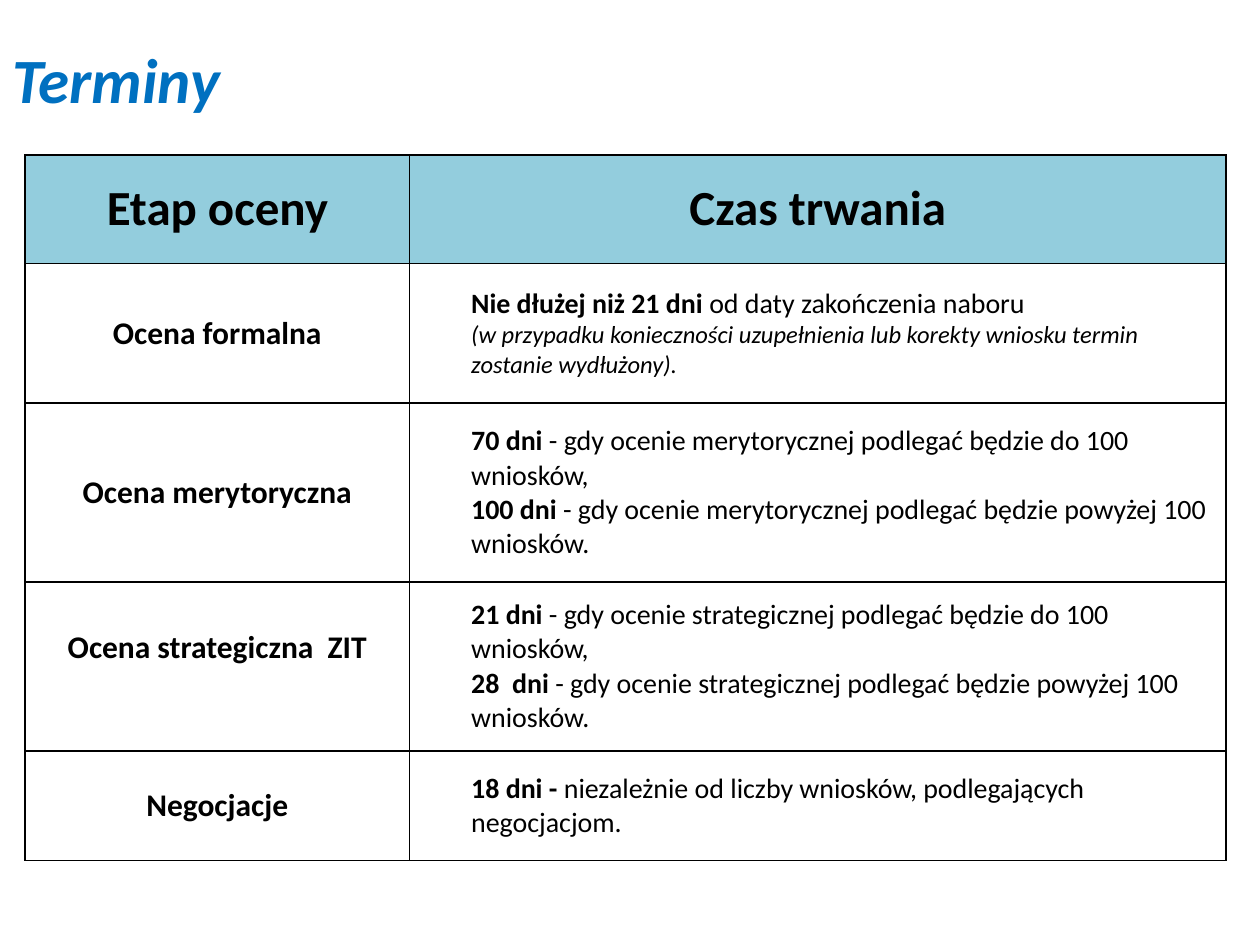
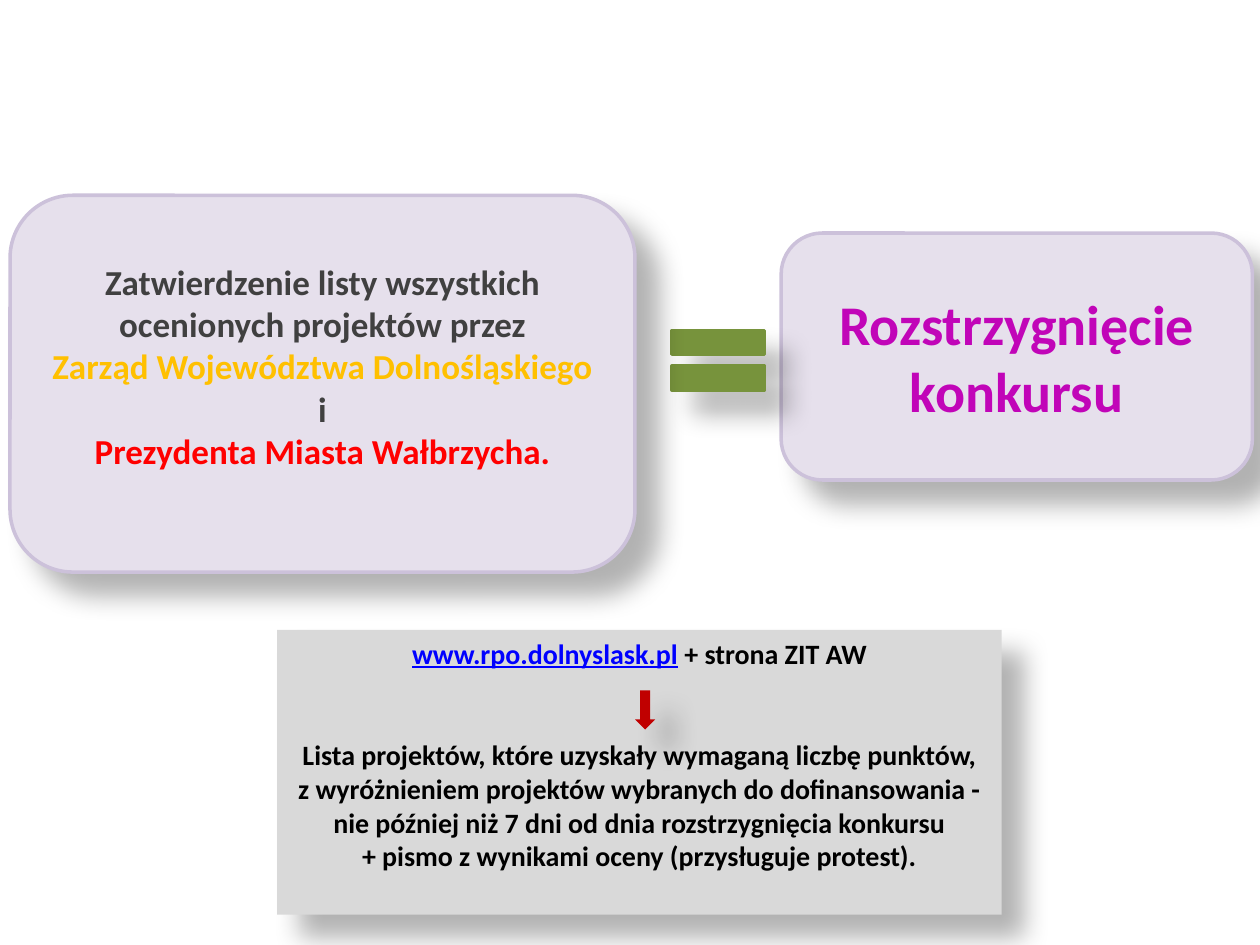
"""Builds two slides on assessment deadlines and the settlement of a contest."""
from lxml import etree
from pptx import Presentation
from pptx import util as u
from pptx.dml.color import RGBColor
from pptx.enum import shapes, text
from pptx.oxml.ns import qn

COLUMNS, ROWS = 100, 75
BLACK, WHITE, BLUE, HEADER = "000000", "FFFFFF", "0070C0", "93CDDD"
LILAC, LILAC_EDGE, GREEN, GREY, RED = "E6E0EC", "CCC1DA", "77933C", "D9D9D9", "C00000"
LEFT, CENTER = text.PP_ALIGN.LEFT, text.PP_ALIGN.CENTER
TOP, MIDDLE = text.MSO_ANCHOR.TOP, text.MSO_ANCHOR.MIDDLE


def color(value):
    return RGBColor.from_string(value)


class Painter:
    """Holds the style and the current slide."""

    def __init__(self, deck, font="Calibri"):
        self.deck, self.font, self.page = deck, font, None
        self.column = deck.slide_width / COLUMNS
        self.row = deck.slide_height / ROWS

    def new_page(self):
        self.page = self.deck.slides.add_slide(self.deck.slide_layouts[6])

    def across(self, columns):
        return u.Emu(round(columns * self.column))

    def down(self, rows):
        return u.Emu(round(rows * self.row))

    def place(self, left, top, width, height):
        return self.across(left), self.down(top), self.across(width), self.down(height)

    def fill_text(self, frame, paras, size, ink=BLACK, bold=None, align=CENTER):
        for index, (spans, style) in enumerate(paras):
            para = frame.paragraphs[0] if index == 0 else frame.add_paragraph()
            para.alignment = align
            if "before" in style:
                para.space_before = u.Pt(style["before"])
            font = para.font
            font.name, font.size = self.font, u.Pt(style.get("size", size))
            font.bold, font.italic = bold, style.get("italic")
            font.color.rgb = color(style.get("ink", ink))
            for words, look in spans:
                self.span(para, words, look)

    def span(self, para, words, look):
        for index, line in enumerate(words.split("\n")):
            if index:
                para.add_line_break()
            span = para.add_run()
            span.text = line
            if "bold" in look:
                span.font.bold = look["bold"]
            if "link_ink" in look:
                span.font.underline = True
                span.font.color.rgb = color(look["link_ink"])

    def title(self, words):
        box = self.page.shapes.add_textbox(*self.place(0, 0, 90, 12.5))
        frame = box.text_frame
        frame.word_wrap, frame.vertical_anchor = True, MIDDLE
        self.fill_text(frame, [plain(words, italic=True)], 36, BLUE, True, LEFT)

    def shape(self, kind, at, fill, edge=None):
        shape = self.page.shapes.add_shape(kind, *self.place(*at))
        shape.fill.solid()
        shape.fill.fore_color.rgb = color(fill)
        if edge:
            shape.line.color.rgb = color(edge)
            shape.line.width = u.Pt(2)
        else:
            shape.line.fill.background()
        self.cast_shadow(shape)
        return shape

    def cast_shadow(self, shape):
        shape.shadow.inherit = False
        effects = shape._element.spPr.find(qn("a:effectLst"))
        shadow = etree.SubElement(
            effects, qn("a:outerShdw"), blurRad=str(u.Pt(15)), dist=str(u.Pt(18)),
            dir=str(45 * 60000), algn="tl", rotWithShape="0")
        tint = etree.SubElement(shadow, qn("a:srgbClr"), val=BLACK)
        etree.SubElement(tint, qn("a:alpha"), val="30000")

    def panel(self, kind, at, paras, size, fill, edge=None, ink=BLACK, anchor=MIDDLE, lift=0):
        frame = self.shape(kind, at, fill, edge).text_frame
        frame.word_wrap, frame.vertical_anchor = True, anchor
        frame.margin_bottom = self.down(0.5 + lift)
        self.fill_text(frame, paras, size, ink, True)

    def table(self, left, top, widths, heights):
        frame = self.page.shapes.add_table(
            len(heights), len(widths), *self.place(left, top, sum(widths), sum(heights)))
        table = frame.table
        table.first_row = table.horz_banding = False
        for column, width in zip(table.columns, widths):
            column.width = self.across(width)
        for row, height in zip(table.rows, heights):
            row.height = self.down(height)
        return table

    def cell(self, cell, paras, size, fill=WHITE, bold=None, align=CENTER, indent=0, lift=0):
        cell.fill.solid()
        cell.fill.fore_color.rgb = color(fill)
        cell.vertical_anchor = MIDDLE
        cell.margin_left = self.across(1 + indent)
        cell.margin_bottom = self.down(0.5 + lift)
        for index, side in enumerate(("lnL", "lnR", "lnT", "lnB")):
            border = etree.Element(qn("a:" + side), w=str(u.Pt(1)))
            paint = etree.SubElement(border, qn("a:solidFill"))
            etree.SubElement(paint, qn("a:srgbClr"), val=BLACK)
            cell._tc.tcPr.insert(index, border)
        self.fill_text(cell.text_frame, paras, size, BLACK, bold, align)


def plain(words, **style):
    return [(words, {})], style


def term(days, rest):
    return [(days, {"bold": True}), (rest, {})], {}


HEADINGS = ("Etap oceny", "Czas trwania")
STAGES = [
    ("Ocena formalna", 0, [
        term("Nie dłużej niż 21 dni ", "od daty zakończenia naboru"),
        plain("(w przypadku konieczności uzupełnienia lub korekty wniosku termin\n"
              "zostanie wydłużony).", size=14, italic=True)]),
    ("Ocena merytoryczna", 0, [
        term("70 dni ", "- gdy ocenie merytorycznej podlegać będzie do 100 wniosków,"),
        term("100 dni ", "- gdy ocenie merytorycznej podlegać będzie powyżej 100 wniosków.")]),
    ("Ocena strategiczna  ZIT", 3, [
        term("21 dni ", "- gdy ocenie strategicznej podlegać będzie do 100\nwniosków,"),
        term("28  dni ", "- gdy ocenie strategicznej podlegać będzie powyżej 100\nwniosków.")]),
    ("Negocjacje", 0, [
        term("18 dni - ", "niezależnie od liczby wniosków, podlegających\nnegocjacjom.")]),
]


def deadlines(painter):
    painter.new_page()
    painter.title("Terminy")
    table = painter.table(2, 12.3, (30.5, 64.8), (8.6, 11.1, 14.2, 13.4, 8.7))
    for index, heading in enumerate(HEADINGS):
        painter.cell(table.cell(0, index), [plain(heading)], 28, HEADER, True)
    for index, (stage, lift, terms) in enumerate(STAGES, 1):
        painter.cell(table.cell(index, 0), [plain(stage)], 18, bold=True, lift=lift)
        painter.cell(table.cell(index, 1), terms, 16, align=LEFT, indent=3.9)


def settlement(painter):
    kinds = shapes.MSO_SHAPE
    painter.new_page()
    painter.panel(kinds.ROUNDED_RECTANGLE, (62, 18.5, 37.4, 19.6),
                  [plain("Rozstrzygnięcie konkursu")], 32, LILAC, LILAC_EDGE, "C105B8")
    painter.shape(kinds.MATH_EQUAL, (52, 24.6, 10, 8), GREEN, GREEN)
    approval = [
        plain("Zatwierdzenie listy wszystkich ocenionych projektów przez"),
        plain("Zarząd Województwa Dolnośląskiego", ink="FFC000"),
        plain("i"),
        plain("Prezydenta Miasta Wałbrzycha.", ink="FF0000"),
    ]
    painter.panel(kinds.ROUNDED_RECTANGLE, (0.8, 15.5, 49.6, 29.9), approval, 20,
                  LILAC, LILAC_EDGE, "404040", lift=2.8)
    publication = [
        ([("www.rpo.dolnyslask.pl", {"link_ink": "0000FF"}), (" + strona ZIT AW", {})], {}),
        plain("Lista projektów, które uzyskały wymaganą liczbę punktów,\n"
              "z wyróżnieniem projektów wybranych do dofinansowania - "
              "nie później niż 7 dni od dnia rozstrzygnięcia konkursu\n"
              "+ pismo z wynikami oceny (przysługuje protest).", before=39),
    ]
    painter.panel(kinds.RECTANGLE, (22, 50, 57.5, 22.6), publication, 16, GREY, anchor=TOP)
    painter.shape(kinds.DOWN_ARROW, (50.4, 54.8, 1.6, 3.1), RED)


def main():
    deck = Presentation()
    deck.slide_width, deck.slide_height = u.Inches(10), u.Inches(7.5)
    painter = Painter(deck)
    deadlines(painter)
    settlement(painter)
    deck.save("out.pptx")


if __name__ == "__main__":
    main()
